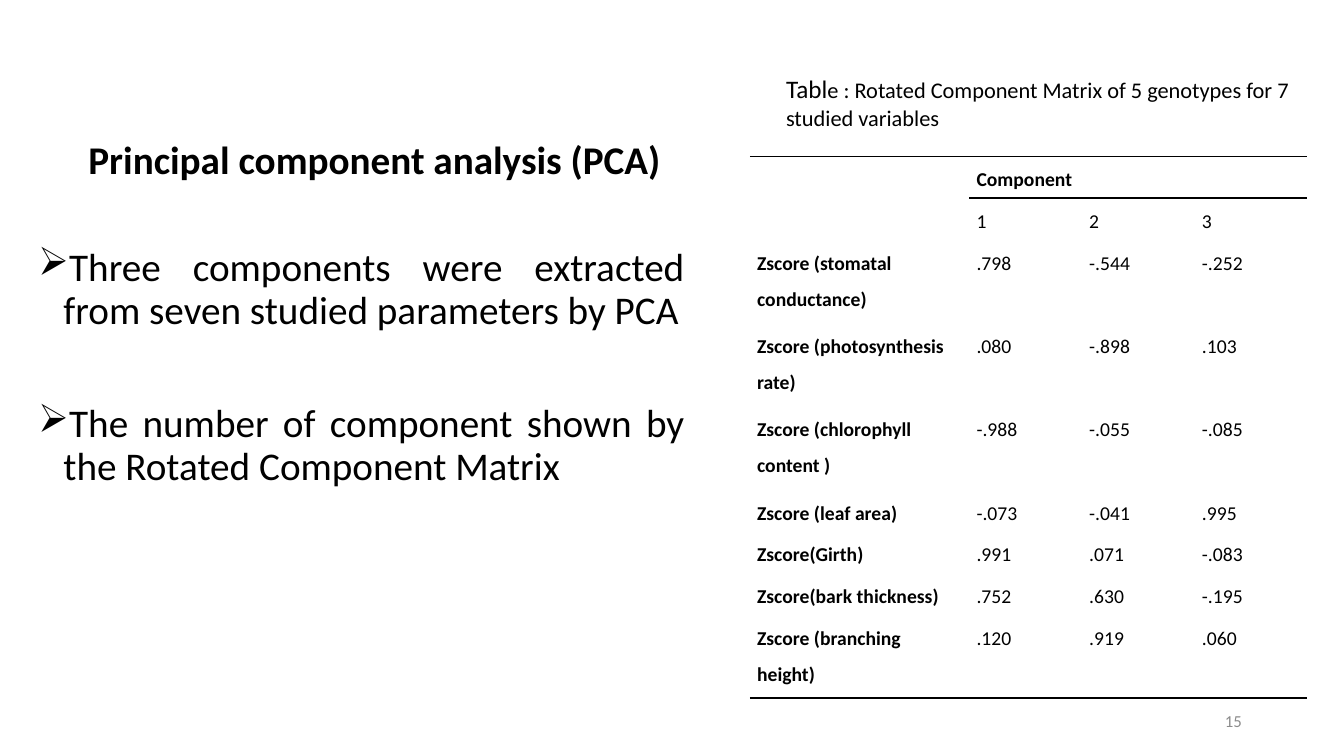
import dataclasses

import lxml.etree
import pptx
import pptx.dml.color
import pptx.enum.text
import pptx.oxml.ns
import pptx.util

Cm = pptx.util.Cm
Pt = pptx.util.Pt
qn = pptx.oxml.ns.qn
Align = pptx.enum.text.PP_ALIGN
Anchor = pptx.enum.text.MSO_ANCHOR

NO_GRID_STYLE = "{2D5ABB26-0587-4C30-8999-92F81FD0307C}"
COMPONENTS = ["1", "2", "3"]
SCORES = [
    ("Zscore (stomatal conductance)", ".798", "-.544", "-.252"),
    ("Zscore (photosynthesis rate)", ".080", "-.898", ".103"),
    ("Zscore (chlorophyll content )", "-.988", "-.055", "-.085"),
    ("Zscore (leaf area)", "-.073", "-.041", ".995"),
    ("Zscore(Girth)", ".991", ".071", "-.083"),
    ("Zscore(bark thickness)", ".752", ".630", "-.195"),
    ("Zscore (branching height)", ".120", ".919", ".060"),
]
TALL_ROWS = {2, 3, 4, 8}


@dataclasses.dataclass(frozen=True)
class Theme:
    font: str = "Calibri"
    ink: str = "000000"
    muted: str = "8C8C8C"
    body: int = 28
    caption_lead: int = 18
    caption: int = 16
    cell: int = 14
    footer: int = 12


class SlideBuilder:
    def __init__(self, page, theme):
        self.page = page
        self.theme = theme

    def style(self, span, size, bold=False, color=None):
        span.font.name = self.theme.font
        span.font.size = Pt(size)
        span.font.bold = bold
        span.font.color.rgb = pptx.dml.color.RGBColor.from_string(color or self.theme.ink)

    def text_box(self, left, top, width, height, anchor=Anchor.TOP):
        box = self.page.shapes.add_textbox(Cm(left), Cm(top), Cm(width), Cm(height))
        frame = box.text_frame
        frame.word_wrap = True
        frame.vertical_anchor = anchor
        return frame

    def indent(self, para, margin, first=0.0, bullet=None):
        properties = para._p.get_or_add_pPr()
        properties.set("marL", str(Cm(margin)))
        properties.set("indent", str(Cm(first)))
        if bullet:
            lxml.etree.SubElement(properties, qn("a:buChar"), char=bullet)

    def body(self, heading, points):
        frame = self.text_box(0.71, 3.43, 16.79, 13.59)
        frame.text = heading
        title = frame.paragraphs[0]
        title.line_spacing = 0.9
        self.indent(title, 1.27)
        self.style(title.runs[0], self.theme.body, bold=True)
        for text, gap in points:
            para = frame.add_paragraph()
            para.text = text
            para.alignment = Align.JUSTIFY
            para.line_spacing = 0.9
            para.space_before = Pt(gap)
            self.indent(para, 0.64, -0.64, "➢")
            self.style(para.runs[0], self.theme.body)

    def caption(self, lead, rest):
        para = self.text_box(19.56, 1.73, 13.39, 1.7).paragraphs[0]
        for text, size in ((lead, self.theme.caption_lead), (rest, self.theme.caption)):
            span = para.add_run()
            span.text = text
            self.style(span, size)

    def page_number(self, number):
        frame = self.text_box(23.93, 17.65, 7.62, 1.02, Anchor.MIDDLE)
        frame.text = number
        para = frame.paragraphs[0]
        para.alignment = Align.RIGHT
        self.style(para.runs[0], self.theme.footer, color=self.theme.muted)

    def borders(self, cell, sides):
        properties = cell._tc.get_or_add_tcPr()
        for side in ("L", "R", "T", "B"):
            drawn = side in sides
            line = lxml.etree.SubElement(
                properties, qn(f"a:ln{side}"), w=str(Pt(1) if drawn else 0))
            if drawn:
                fill = lxml.etree.SubElement(line, qn("a:solidFill"))
                lxml.etree.SubElement(fill, qn("a:srgbClr"), val=self.theme.ink)
            else:
                lxml.etree.SubElement(line, qn("a:noFill"))

    def fill_cell(self, cell, text, bold, sides):
        cell.margin_left = cell.margin_right = Cm(0.18)
        cell.margin_top = cell.margin_bottom = 0
        self.borders(cell, sides)
        cell.fill.background()
        cell.text = text
        para = cell.text_frame.paragraphs[0]
        para.line_spacing = 1.5
        para.space_after = Pt(10)
        for span in para.runs:
            self.style(span, self.theme.cell, bold)

    def matrix(self, rows):
        frame = self.page.shapes.add_table(
            len(rows), 4, Cm(18.9), Cm(3.94), Cm(14.05), Cm(13.65))
        table = frame.table
        table.first_row = table.horz_banding = False
        for style_id in frame.element.iter(qn("a:tableStyleId")):
            style_id.text = NO_GRID_STYLE
        for index, column in enumerate(table.columns):
            column.width = Cm(2.84 if index else 5.53)
        for index, row in enumerate(table.rows):
            row.height = Cm(2.1 if index in TALL_ROWS else 1.05)
        last = len(rows) - 1
        for r, values in enumerate(rows):
            for c, text in enumerate(values):
                sides = {0: "TB" if c else "T", 1: "T" if c else "", last: "B"}.get(r, "")
                self.fill_cell(table.cell(r, c), text, r == 0 or c == 0, sides)
        table.cell(0, 0).merge(table.cell(1, 0))
        table.cell(0, 1).merge(table.cell(0, 3))


def main():
    deck = pptx.Presentation()
    deck.slide_width = Cm(33.87)
    deck.slide_height = Cm(19.05)
    page = deck.slides.add_slide(deck.slide_layouts[6])
    builder = SlideBuilder(page, Theme())
    builder.body("Principal component analysis (PCA)", [
        ("Three components were extracted from seven studied parameters by PCA", 46),
        ("The number of component shown by the Rotated Component Matrix", 51),
    ])
    builder.page_number("15")
    builder.caption(
        "Tabl", "e : Rotated Component Matrix of 5 genotypes for 7 studied variables")
    builder.matrix([["", "Component", "", ""], ["", *COMPONENTS], *SCORES])
    deck.save("out.pptx")


if __name__ == "__main__":
    main()
